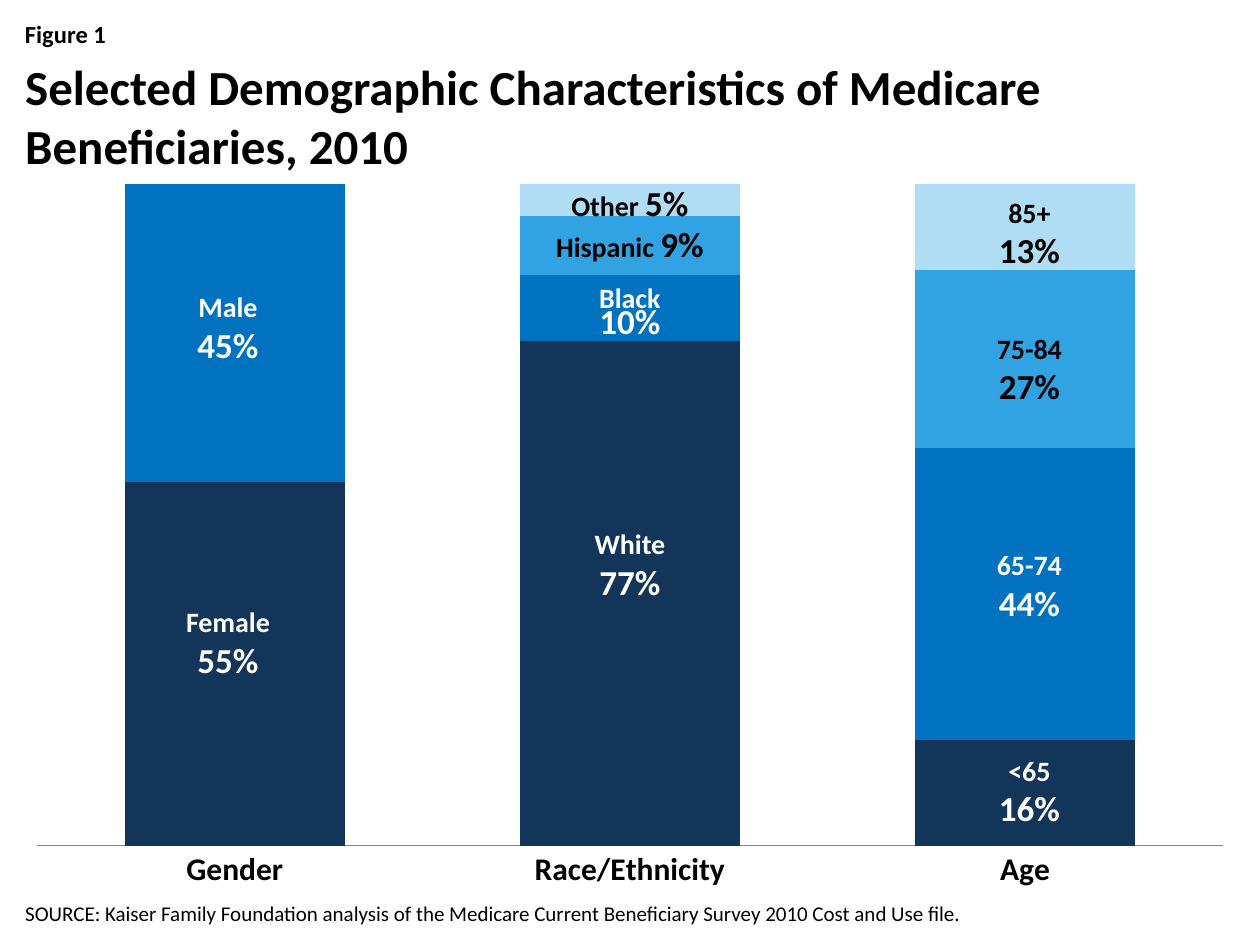
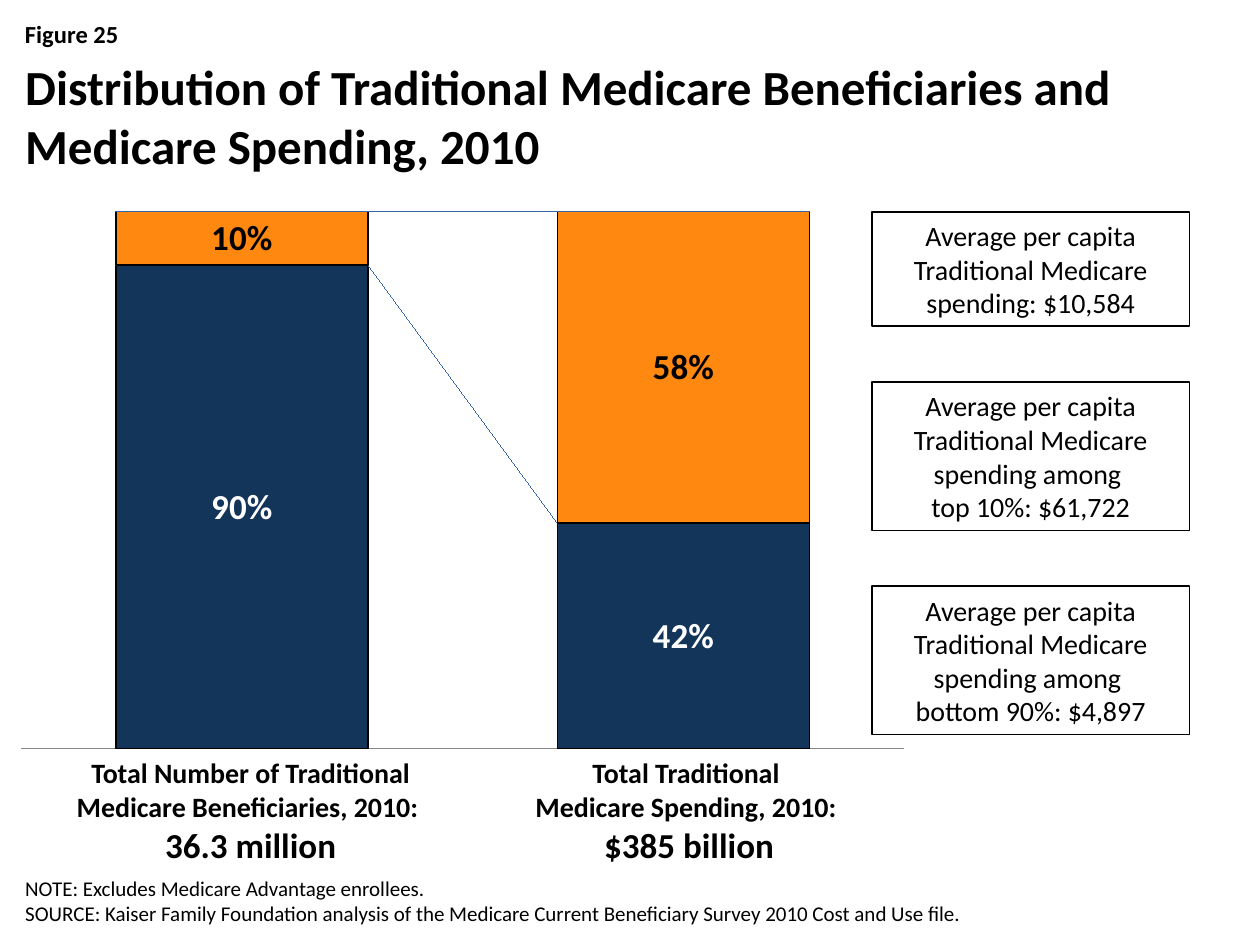
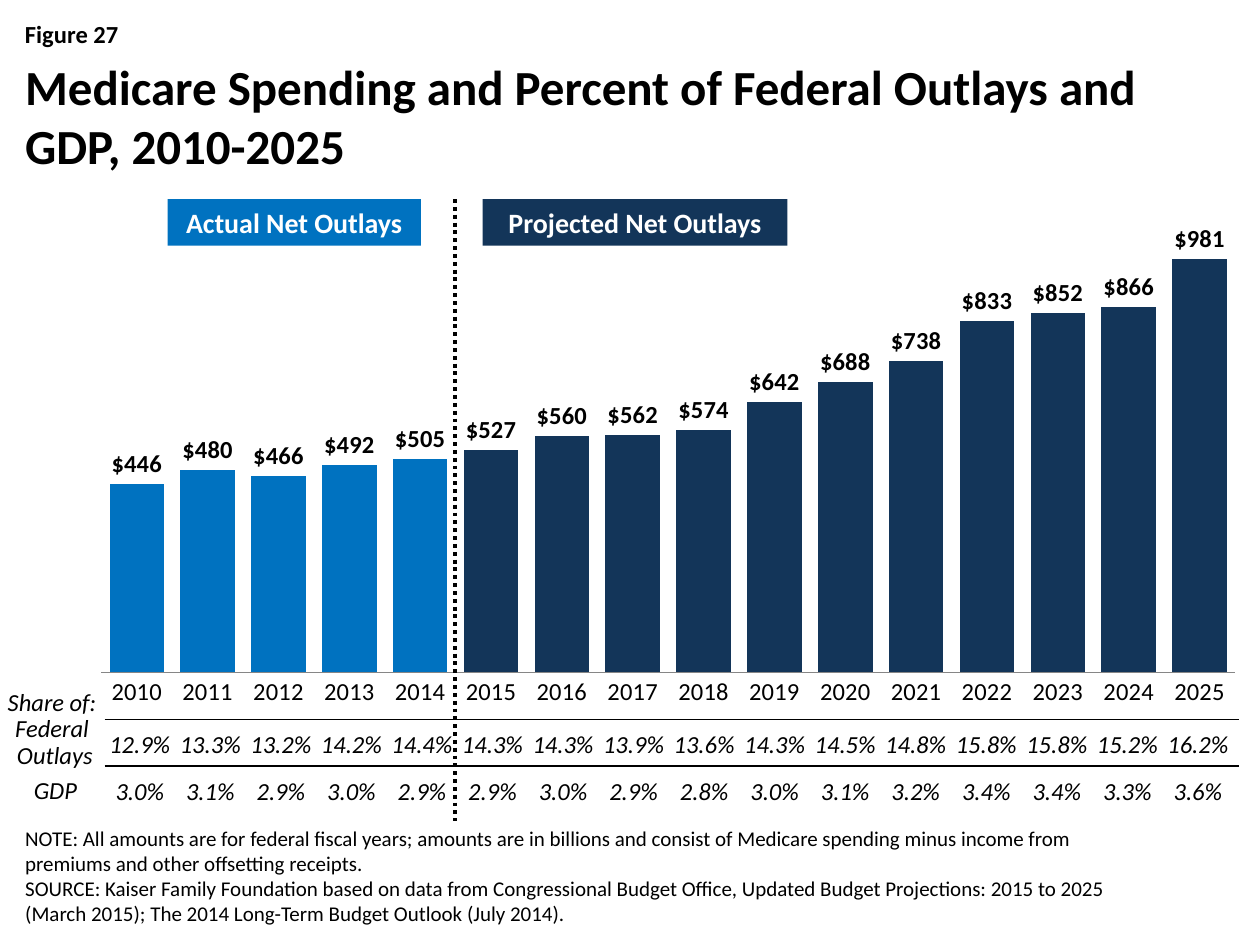
"""Three Medicare figures: demographics, spending distribution and outlays."""
from lxml import etree
from pptx import Presentation
from pptx import util as u
from pptx.chart.data import CategoryChartData
from pptx.dml.color import RGBColor
from pptx.enum import chart as ch, dml, shapes, text
from pptx.oxml import parse_xml
from pptx.oxml.ns import nsdecls, qn

PX = 9144
FONT = "Calibri"
NAVY, BLUE, SKY, PALE, ORANGE = "133559", "0072C0", "31A3E3", "B0DDF4", "FF8811"
BLACK, WHITE, AXIS, LINK = "000000", "FFFFFF", "868686", "2F5F9E"
NO_STYLE = "{2D5ABB26-0587-4C30-8999-92F81FD0307C}"
LEFT, CENTER = text.PP_ALIGN.LEFT, text.PP_ALIGN.CENTER
rgb = RGBColor.from_string


def style(font, size, color=BLACK, bold=False, italic=False):
    """Apply the deck's font with the given size and look."""
    font.name, font.size, font.bold, font.italic = FONT, u.Pt(size), bold, italic
    font.color.rgb = rgb(color)


def write(frame, lines, color=BLACK, bold=False, italic=False, align=CENTER, spacing=None, wrap=True):
    """Fill a text frame with lines of (words, size) and an optional (words, size) tail."""
    frame.word_wrap = wrap
    for number, (words, size, *tail) in enumerate(lines):
        paragraph = frame.add_paragraph() if number else frame.paragraphs[0]
        paragraph.text = words
        paragraph.alignment = align
        paragraph.space_before = u.Pt(0)
        if spacing:
            paragraph.line_spacing = spacing
        style(paragraph.font, size, color, bold, italic)
        for tail_words, tail_size in tail:
            run = paragraph.add_run()
            run.text = tail_words
            run.font.size = u.Pt(tail_size)


STACKED, CLUSTERED = ch.XL_CHART_TYPE.COLUMN_STACKED_100, ch.XL_CHART_TYPE.COLUMN_CLUSTERED
SURVEY = ("SOURCE: Kaiser Family Foundation analysis of the Medicare Current Beneficiary Survey "
          "2010 Cost and Use file.")
figures = [
    ("Figure 1", "Selected Demographic Characteristics of Medicare Beneficiaries, 2010", [SURVEY],
     STACKED, (10, 134, 980, 584), (0.02, 0.02, 0.96, 0.9), 80, 18,
     ["Gender", "Race/Ethnicity", "Age"],
     [(NAVY, [55, 77, 16]), (BLUE, [45, 10, 44]), (SKY, [None, 9, 27]), (PALE, [None, 5, 13])]),
    ("Figure 25", "Distribution of Traditional Medicare Beneficiaries and Medicare Spending, 2010",
     ["NOTE: Excludes Medicare Advantage enrollees.", SURVEY],
     STACKED, (7, 147, 987, 520), (0.01, 0.04, 0.71, 0.82), 75, 18,
     ["1", "2"], [(NAVY, [0.9, 0.42]), (ORANGE, [0.1, 0.58])]),
    ("Figure 27", "Medicare Spending and Percent of Federal Outlays and GDP, 2010-2025",
     ["NOTE: All amounts are for federal fiscal years; amounts are in billions and consist of "
      "Medicare spending minus income from premiums and other offsetting receipts.",
      "SOURCE: Kaiser Family Foundation based on data from Congressional Budget Office, Updated "
      "Budget Projections: 2015 to 2025 (March 2015); The 2014 Long-Term Budget Outlook (July 2014)."],
     CLUSTERED, (12, 156, 978, 472), (0.07, 0.02, 0.92, 0.78), 30, 14,
     [str(year) for year in range(2010, 2026)],
     [(NAVY, [446, 480, 466, 492, 505, 527, 560, 562, 574, 642, 688, 738, 833, 852, 866, 981])]),
]

deck = Presentation()
deck.slide_width, deck.slide_height = 1000 * PX, 750 * PX
slides, charts = [], []

for figure, headline, notes, kind, place, plot_area, gap, size, categories, series_list in figures:
    slide = deck.slides.add_slide(deck.slide_layouts[1])
    title, footnote = slide.placeholders
    title.left, title.top, title.width, title.height = [v * PX for v in (10, 40, 980, 100)]
    footnote.left, footnote.top, footnote.width, footnote.height = [v * PX for v in (10, 680, 910, 60)]
    title.text_frame.vertical_anchor = text.MSO_ANCHOR.TOP
    footnote.text_frame.vertical_anchor = text.MSO_ANCHOR.BOTTOM
    for holder in (title, footnote):
        holder.text_frame.auto_size = text.MSO_AUTO_SIZE.NONE
    write(title.text_frame, [(headline, 28)], bold=True, align=LEFT)
    write(footnote.text_frame, [(note, 12) for note in notes], align=LEFT)
    for paragraph in footnote.text_frame.paragraphs:
        properties = paragraph._p.get_or_add_pPr()
        properties.set("marL", "0")
        properties.set("indent", "0")
        properties.find(qn("a:defRPr")).addprevious(parse_xml(f"<a:buNone {nsdecls('a')}/>"))
    figure_label = slide.shapes.add_textbox(*[v * PX for v in (10, 10, 980, 34)])
    write(figure_label.text_frame, [(figure, 14)], bold=True, align=LEFT)

    data = CategoryChartData()
    data.categories = categories
    for number, (color, values) in enumerate(series_list, 1):
        data.add_series(f"Series {number}", values)
    chart = slide.shapes.add_chart(kind, *[v * PX for v in place], data).chart
    chart.has_legend = chart.has_title = False
    style(chart.font, size)
    plot = chart.plots[0]
    plot.gap_width, plot.vary_by_categories = gap, False
    if kind == STACKED:
        plot.overlap = 100
    for series, (color, values) in zip(plot.series, series_list):
        series.format.fill.solid()
        series.format.fill.fore_color.rgb = rgb(color)
    chart.value_axis.visible = chart.value_axis.has_major_gridlines = False
    axis = chart.category_axis
    axis.major_tick_mark = ch.XL_TICK_MARK.NONE
    axis.format.line.color.rgb = rgb(AXIS)
    axis.format.line.width = u.Pt(0.75)
    area = chart._chartSpace.xpath("//c:plotArea")[0]
    for old_layout in area.findall(qn("c:layout")):
        area.remove(old_layout)
    sides = "".join(f'<c:{side} val="{value}"/>' for side, value in zip("xywh", plot_area))
    area.insert(0, parse_xml(
        f'<c:layout {nsdecls("c")}><c:manualLayout><c:layoutTarget val="inner"/>'
        f'<c:xMode val="edge"/><c:yMode val="edge"/>{sides}</c:manualLayout></c:layout>'))
    slides.append(slide)
    charts.append(chart)

demographics, distribution, outlays = slides
people_chart, share_chart, outlay_chart = charts

style(people_chart.category_axis.tick_labels.font, 18, bold=True)
GENDER, RACE, AGE = 181, 500, 817
segments = [
    (GENDER, 225, "Male", "45%", WHITE), (GENDER, 475, "Female", "55%", WHITE),
    (RACE, 413, "White", "77%", WHITE), (AGE, 258, "75-84", "27%", BLACK),
    (AGE, 593, "<65", "16%", WHITE), (AGE, 430, "65-74", "44%", WHITE),
    (AGE, 150, "85+", "13%", BLACK),
]
for middle, top, group, share, color in segments:
    label = demographics.shapes.add_textbox((middle - 50) * PX, top * PX, 100 * PX, 71 * PX)
    write(label.text_frame, [(group, 16), (share, 20)], color, bold=True, wrap=False)
tight_segments = [
    (222, 100, 55, [("Black", 16), ("10%", 20)], WHITE),
    (183, 150, 34, [("Hispanic ", 16, ("9%", 20))], BLACK),
    (150, 120, 33, [("Other ", 16, ("5%", 20))], BLACK),
]
for top, width, height, lines, color in tight_segments:
    label = demographics.shapes.add_textbox((RACE - width // 2) * PX, top * PX, width * PX, height * PX)
    write(label.text_frame, lines, color, bold=True, spacing=u.Pt(16), wrap=False)

share_chart.category_axis.tick_label_position = ch.XL_TICK_LABEL_POSITION.NONE
for series, color in zip(share_chart.plots[0].series, (WHITE, BLACK)):
    series.format.line.color.rgb = rgb(BLACK)
    series.format.line.width = u.Pt(0.75)
    labels = series.data_labels
    labels.show_value = True
    labels.number_format, labels.number_format_is_linked = "0%", False
    style(labels.font, 20, color, bold=True)
share_chart._chartSpace.xpath("//c:overlap")[0].addnext(parse_xml(
    f'<c:serLines {nsdecls("c", "a")}><c:spPr><a:ln w="9525"><a:solidFill>'
    f'<a:srgbClr val="{LINK}"/></a:solidFill></a:ln></c:spPr></c:serLines>'))

totals = [
    (34, [("Total Number of Traditional Medicare Beneficiaries, 2010: ", 16), ("36.3 million", 20)]),
    (382, [("Total Traditional ", 16), ("Medicare Spending, 2010: ", 16), ("$385 billion", 20)]),
]
for left, lines in totals:
    total = distribution.shapes.add_textbox(left * PX, 595 * PX, 330 * PX, 97 * PX)
    write(total.text_frame, lines, bold=True)

averages = [
    (91, "spending: $10,584"),
    (118, "spending among \ntop 10%: $61,722"),
    (118, "spending among \nbottom 90%: $4,897"),
]
top = 168
for height, ending in averages:
    average = distribution.shapes.add_shape(
        shapes.MSO_SHAPE.RECTANGLE, 692 * PX, top * PX, 252 * PX, height * PX)
    average.shadow.inherit = False
    average.fill.background()
    average.line.color.rgb = rgb(BLACK)
    average.line.width = u.Pt(1)
    write(average.text_frame, [(f"Average per capita Traditional Medicare {ending}", 16)])
    top += height + 44

outlay_chart.value_axis.minimum_scale, outlay_chart.value_axis.maximum_scale = 0, 1100
spending = outlay_chart.plots[0].series[0]
for year in range(5):
    actual = spending.points[year].format.fill
    actual.solid()
    actual.fore_color.rgb = rgb(BLUE)
labels = spending.data_labels
labels.show_value = True
labels.position = ch.XL_LABEL_POSITION.OUTSIDE_END
labels.number_format, labels.number_format_is_linked = '"$"#,##0', False
style(labels.font, 14, bold=True)

federal_shares = [12.9, 13.3, 13.2, 14.2, 14.4, 14.3, 14.3, 13.9,
                  13.6, 14.3, 14.5, 14.8, 15.8, 15.8, 15.2, 16.2]
gdp_shares = [3.0, 3.1, 2.9, 3.0, 2.9, 2.9, 3.0, 2.9, 2.8, 3.0, 3.1, 3.2, 3.4, 3.4, 3.3, 3.6]
for top, shares, inset in ((571, federal_shares, 0), (608, gdp_shares, 5)):
    frame = outlays.shapes.add_table(1, 16, 83 * PX, top * PX, 16 * 56 * PX, 41 * PX)
    frame.table.first_row = frame.table.horz_banding = False
    for style_id in frame._element.iter(qn("a:tableStyleId")):
        style_id.text = NO_STYLE
    for cell, share in zip(frame.table.iter_cells(), shares):
        cell.fill.background()
        cell.vertical_anchor = text.MSO_ANCHOR.MIDDLE
        cell.margin_left = cell.margin_right = cell.margin_top = cell.margin_bottom = inset * PX
        write(cell.text_frame, [(f"{share:.1f}%", 14)], italic=True)

rules = [
    (83, 571, 983, 571, 1, None),
    (83, 608, 983, 608, 1, None),
    (361, 158, 361, 652, 2.25, dml.MSO_LINE.ROUND_DOT),
]
for *ends, weight, dash in rules:
    rule = outlays.shapes.add_connector(shapes.MSO_CONNECTOR.STRAIGHT, *[v * PX for v in ends])
    rule.line.color.rgb = rgb(BLACK)
    rule.line.width = u.Pt(weight)
    rule.line.dash_style = dash
    etree.SubElement(rule._element.spPr, qn("a:effectLst"))

for left, width, period, color in ((133, 201, "Actual", BLUE), (383, 242, "Projected", NAVY)):
    key = outlays.shapes.add_shape(
        shapes.MSO_SHAPE.RECTANGLE, left * PX, 158 * PX, width * PX, 37 * PX)
    key.shadow.inherit = False
    key.fill.solid()
    key.fill.fore_color.rgb = rgb(color)
    key.line.fill.background()
    write(key.text_frame, [(f"{period} Net Outlays", 16)], WHITE, bold=True)

row_heads = [
    ((-6, 543, 99, 74), "Share of: \nFederal \nOutlays"),
    ((0, 613, 88, 31), "GDP"),
]
for place, words in row_heads:
    head = outlays.shapes.add_textbox(*[v * PX for v in place])
    write(head.text_frame, [(words, 14)], italic=True, spacing=0.9)

deck.save("out.pptx")
